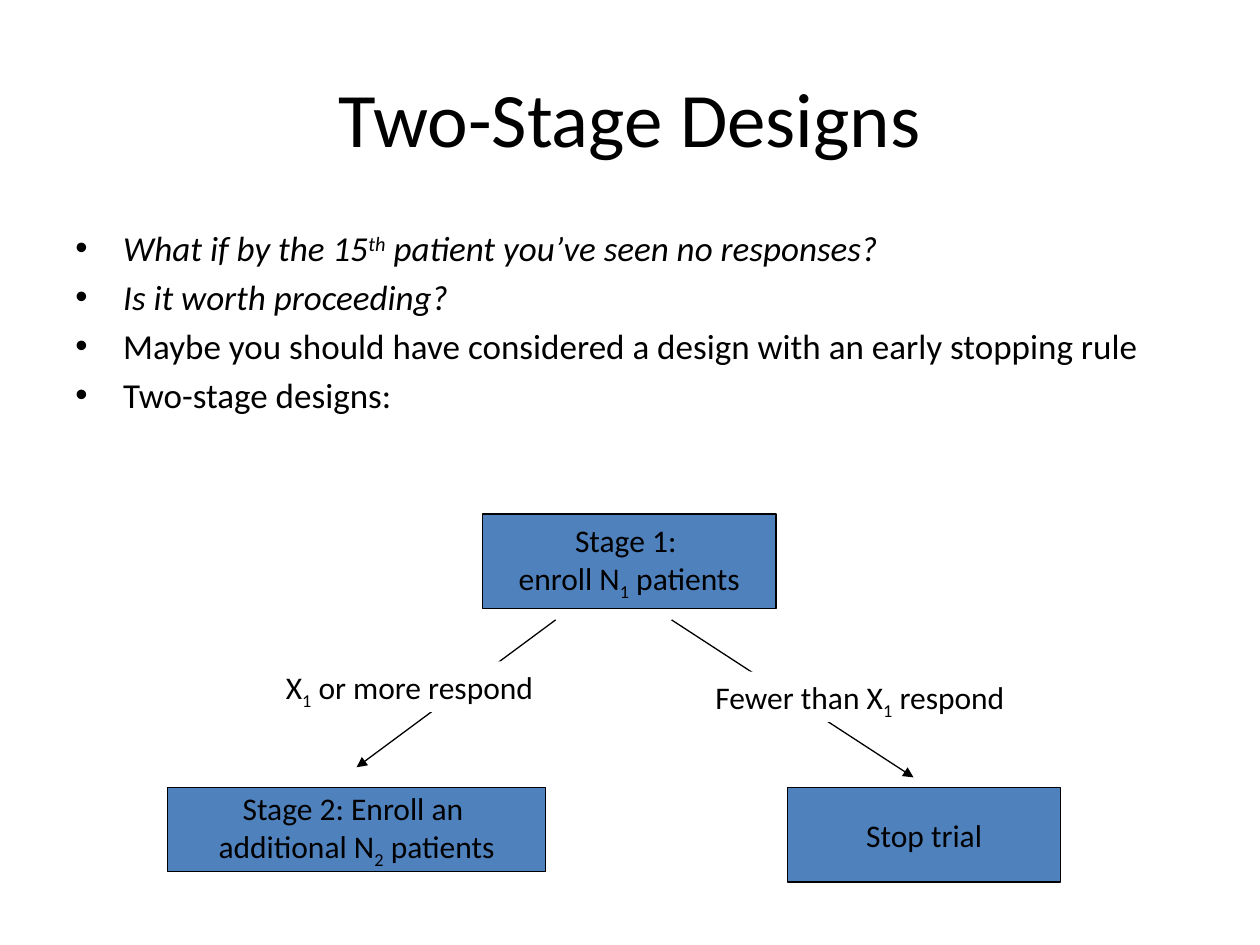
"""Build a slide that explains two-stage trial designs."""
from lxml.etree import SubElement
from pptx import Presentation
from pptx.dml.color import RGBColor
from pptx.enum.shapes import MSO_CONNECTOR, MSO_SHAPE
from pptx.enum.text import MSO_ANCHOR, MSO_AUTO_SIZE, PP_ALIGN
from pptx.oxml.ns import qn
from pptx.util import Inches, Pt

BLACK = RGBColor(0, 0, 0)
WHITE = RGBColor(0xFF, 0xFF, 0xFF)
BLUE = RGBColor(0x4F, 0x81, 0xBD)
SUB, SUPER = "-25000", "30000"


class Board:
    font = "Calibri"
    line = Pt(0.75)

    def __init__(self, slide):
        self.slide = slide

    def fill_para(self, para, runs, size, align=PP_ALIGN.LEFT, italic=False):
        para.alignment = align
        for item in runs:
            text, base = (item, None) if isinstance(item, str) else item
            run = para.add_run()
            run.text = text
            font = run.font
            font.name, font.size, font.italic = self.font, Pt(size), italic
            font.color.rgb = BLACK
            if base:
                run._r.get_or_add_rPr().set("baseline", base)

    def lines(self, frame, rows, size, align):
        for i, runs in enumerate(rows):
            para = frame.add_paragraph() if i else frame.paragraphs[0]
            self.fill_para(para, runs, size, align)

    def text(self, *area):
        frame = self.slide.shapes.add_textbox(*map(Inches, area)).text_frame
        frame.word_wrap = True
        return frame

    def title(self, text, *area):
        frame = self.text(*area)
        frame.vertical_anchor = MSO_ANCHOR.MIDDLE
        self.lines(frame, [[text]], 44, PP_ALIGN.CENTER)

    def bullets(self, rows, *area):
        frame = self.text(*area)
        for i, (runs, italic) in enumerate(rows):
            para = frame.add_paragraph() if i else frame.paragraphs[0]
            self.fill_para(para, runs, 20, italic=italic)
            para.space_before = Pt(4)
            props = para._p.get_or_add_pPr()
            props.set("marL", str(Inches(0.38)))
            props.set("indent", str(-Inches(0.38)))
            SubElement(props, qn("a:buFont")).set("typeface", "Arial")
            SubElement(props, qn("a:buChar")).set("char", "•")

    def rect(self, fill, *area):
        shape = self.slide.shapes.add_shape(MSO_SHAPE.RECTANGLE, *map(Inches, area))
        shape.shadow.inherit = False
        shape.fill.solid()
        shape.fill.fore_color.rgb = fill
        shape.text_frame.word_wrap = False
        return shape

    def box(self, rows, *area):
        shape = self.rect(BLUE, *area)
        shape.line.color.rgb = BLACK
        shape.line.width = self.line
        shape.text_frame.vertical_anchor = MSO_ANCHOR.MIDDLE
        self.lines(shape.text_frame, rows, 18, PP_ALIGN.CENTER)

    def label(self, runs, *area):
        shape = self.rect(WHITE, *area)
        shape.line.fill.background()
        frame = shape.text_frame
        frame.vertical_anchor = MSO_ANCHOR.TOP
        frame.auto_size = MSO_AUTO_SIZE.SHAPE_TO_FIT_TEXT
        self.lines(frame, [runs], 18, PP_ALIGN.LEFT)

    def arrow(self, *ends):
        link = self.slide.shapes.add_connector(MSO_CONNECTOR.STRAIGHT, *map(Inches, ends))
        link.line.color.rgb = BLACK
        link.line.width = self.line
        props = link._element.spPr
        SubElement(props.find(qn("a:ln")), qn("a:tailEnd")).set("type", "triangle")
        SubElement(props, qn("a:effectLst"))


def main():
    deck = Presentation()
    deck.slide_width, deck.slide_height = Inches(10), Inches(7.5)
    board = Board(deck.slides.add_slide(deck.slide_layouts[6]))
    board.title("Two-Stage Designs", 0.5, 0.3, 9, 1.25)
    board.bullets([
        (["What if by the 15", ("th", SUPER), " patient you’ve seen no responses?"], True),
        (["Is it worth proceeding?"], True),
        (["Maybe you should have considered a design with an early stopping rule"], False),
        (["Two-stage designs:"], False),
    ], 0.5, 1.75, 9, 4.95)
    board.arrow(4.41, 4.92, 2.83, 6.09)
    board.arrow(5.33, 4.92, 7.25, 6.17)
    board.box([["Stage 1: "], ["enroll N", ("1", SUB), " patients"]], 3.83, 4.08, 2.33, 0.75)
    board.box([["Stage 2: Enroll an "], ["additional N", ("2", SUB), " patients"]],
              1.33, 6.25, 3, 0.67)
    board.box([["Stop trial"]], 6.25, 6.25, 2.17, 0.75)
    board.label(["X", ("1", SUB), " or more respond"], 2.17, 5.25, 2.66, 0.4)
    board.label(["Fewer than X", ("1", SUB), " respond"], 5.58, 5.33, 3.07, 0.4)
    deck.save("out.pptx")


if __name__ == "__main__":
    main()
